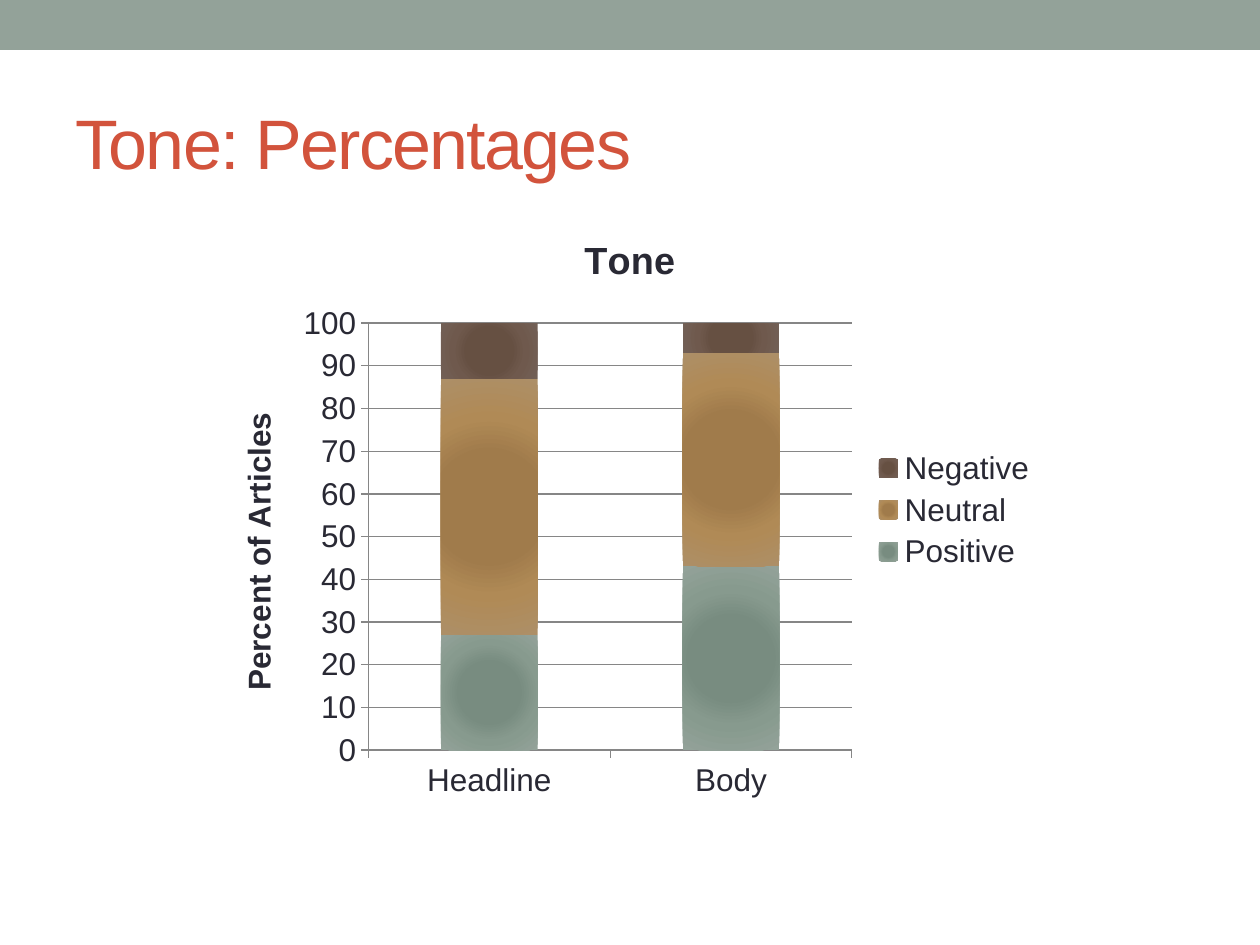
from dataclasses import dataclass

from lxml import etree
from pptx import Presentation
from pptx.chart.data import CategoryChartData
from pptx.dml.color import RGBColor
from pptx.enum.chart import XL_CHART_TYPE, XL_LEGEND_POSITION, XL_TICK_MARK
from pptx.enum.shapes import MSO_SHAPE
from pptx.enum.text import MSO_ANCHOR, PP_ALIGN
from pptx.oxml import parse_xml
from pptx.util import Emu, Pt

STACKED = XL_CHART_TYPE.COLUMN_STACKED
LEGEND_RIGHT = XL_LEGEND_POSITION.RIGHT
TICK_OUTSIDE = XL_TICK_MARK.OUTSIDE
RECTANGLE = MSO_SHAPE.RECTANGLE
MIDDLE = MSO_ANCHOR.MIDDLE
LEFT = PP_ALIGN.LEFT

PX_PER_INCH = 126
TITLE_ONLY = 5
FONT = "Arial"
TEXT, ACCENT, BAND, RULE = "292934", "D2533C", "93A299", "868686"
DRAWING_NS = "http://schemas.openxmlformats.org/drawingml/2006/main"


@dataclass
class Box:
    left: int
    top: int
    width: int
    height: int

    def emu(self) -> list[Emu]:
        return [px(n) for n in (self.left, self.top, self.width, self.height)]


@dataclass
class ToneSeries:
    name: str
    values: tuple[int, int]
    center: str
    middle: str
    edge: str


CATEGORIES = ("Headline", "Body")
SERIES = (
    ToneSeries("Positive", (27, 43), "788C80", "879A8E", "93A299"),
    ToneSeries("Neutral", (60, 50), "A07B4B", "B08A56", "AD8F67"),
    ToneSeries("Negative", (13, 7), "665042", "6F594D", "726056"),
)


def px(length: int) -> Emu:
    return Emu(round(length * 914400 / PX_PER_INCH))


def color(value: str) -> RGBColor:
    return RGBColor.from_string(value)


def style_font(font, size: float, value: str, bold: bool = False) -> None:
    formats = {"name": FONT, "size": Pt(size), "bold": bold}
    for attribute, setting in formats.items():
        setattr(font, attribute, setting)
    font.color.rgb = color(value)


def add_band(slide, box: Box) -> None:
    band = slide.shapes.add_shape(RECTANGLE, *box.emu())
    band.shadow.inherit = False
    band.fill.solid()
    band.fill.fore_color.rgb = color(BAND)
    band.line.fill.background()


def place_title(slide, text: str, box: Box) -> None:
    title = slide.shapes.title
    for attribute, length in zip(("left", "top", "width", "height"), box.emu()):
        setattr(title, attribute, length)
    title.text_frame.vertical_anchor = MIDDLE
    paragraph = title.text_frame.paragraphs[0]
    paragraph.alignment = LEFT
    run = paragraph.add_run()
    run.text = text
    style_font(run.font, 40, ACCENT)
    run.font._element.set("spc", "-100")


def fill_radial(series, tone: ToneSeries) -> None:
    """Fill the columns with a gradient that runs from the center outwards."""
    series.format.fill.solid()
    solid = series.format.fill._xPr.find(f"{{{DRAWING_NS}}}solidFill")
    stops = "".join(
        f'<a:gs pos="{position}"><a:srgbClr val="{value}"/></a:gs>'
        for position, value in ((0, tone.center), (40000, tone.center),
                                (65000, tone.middle), (100000, tone.edge))
    )
    gradient = parse_xml(
        f'<a:gradFill xmlns:a="{DRAWING_NS}" rotWithShape="1"><a:gsLst>{stops}</a:gsLst>'
        '<a:path path="circle"><a:fillToRect l="50000" t="50000" r="50000" b="50000"/>'
        "</a:path></a:gradFill>"
    )
    solid.getparent().replace(solid, gradient)


def add_heading(owner, text: str, size: float) -> None:
    """Give a chart or an axis its bold title."""
    title = owner.chart_title if hasattr(owner, "chart_title") else owner.axis_title
    run = title.text_frame.paragraphs[0].add_run()
    run.text = text
    style_font(run.font, size, TEXT, bold=True)


def style_axis(axis) -> None:
    axis.major_tick_mark = TICK_OUTSIDE
    axis.format.line.color.rgb = color(RULE)
    axis.format.line.width = Pt(0.75)


def add_tone_chart(slide, box: Box) -> None:
    data = CategoryChartData()
    data.categories = CATEGORIES
    for tone in SERIES:
        data.add_series(tone.name, tone.values)
    chart = slide.shapes.add_chart(STACKED, *box.emu(), data).chart
    style_font(chart.font, 18, TEXT)
    add_heading(chart, "Tone", 21.6)

    chart.has_legend = True
    chart.legend.position = LEGEND_RIGHT
    chart.legend.include_in_layout = False

    plot = chart.plots[0]
    plot.gap_width, plot.overlap = 150, 100
    plot.vary_by_categories = False
    for series, tone in zip(plot.series, SERIES):
        fill_radial(series, tone)

    values = chart.value_axis
    scale = {"minimum_scale": 0, "maximum_scale": 100, "major_unit": 10,
             "has_major_gridlines": True}
    for attribute, setting in scale.items():
        setattr(values, attribute, setting)
    values.major_gridlines.format.line.color.rgb = color(RULE)
    values.major_gridlines.format.line.width = Pt(0.75)
    add_heading(values, "Percent of Articles", 18)
    for axis in (values, chart.category_axis):
        style_axis(axis)


def main() -> None:
    presentation = Presentation()
    presentation.slide_width, presentation.slide_height = px(1260), px(945)
    slide = presentation.slides.add_slide(presentation.slide_layouts[TITLE_ONLY])
    add_band(slide, Box(0, 0, 1260, 50))
    place_title(slide, "Tone: Percentages", Box(63, 73, 1134, 136))
    add_tone_chart(slide, Box(210, 210, 840, 600))
    etree.cleanup_namespaces(slide.shapes.title.element)
    presentation.save("out.pptx")


if __name__ == "__main__":
    main()
